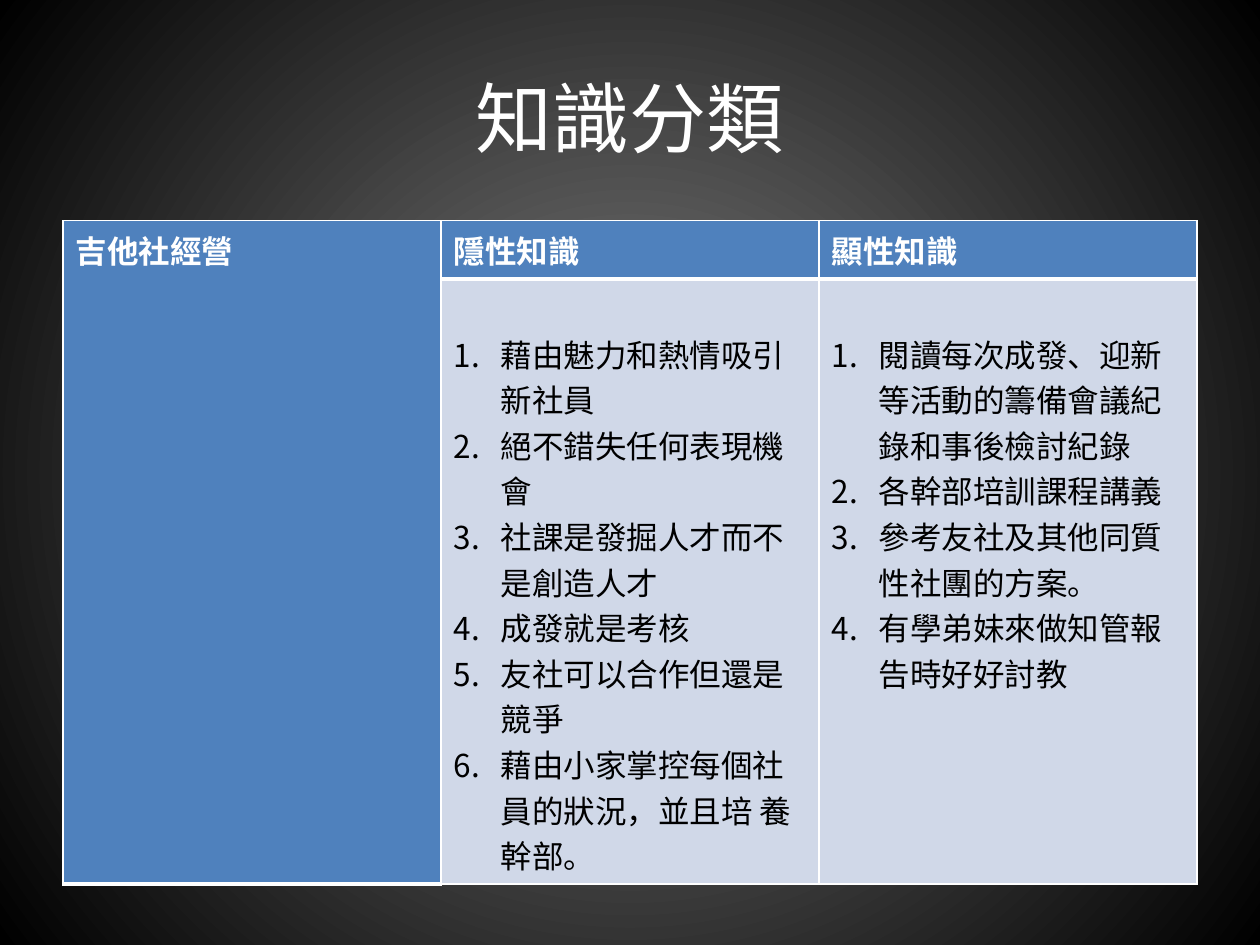
from dataclasses import dataclass

from lxml import etree
from pptx import Presentation
from pptx.dml.color import RGBColor
from pptx.enum import text
from pptx.oxml import ns
from pptx.util import Cm, Pt


@dataclass
class Theme:
    font: str = "Calibri"
    title_size: int = 44
    body_size: int = 18
    light: str = "FFFFFF"
    dark: str = "000000"
    glow: str = "7F7F7F"
    heading_fill: str = "4F81BD"
    body_fill: str = "D0D8E8"


theme = Theme()


def write(paragraph, content, size=theme.body_size, color=theme.dark, bold=False, numbered=False):
    run = paragraph.add_run()
    run.text = content
    run.font.name = theme.font
    run.font.size = Pt(size)
    run.font.bold = bold
    run.font.color.rgb = RGBColor.from_string(color)
    if numbered:
        properties = paragraph._p.get_or_add_pPr()
        properties.set("marL", str(Cm(0.95)))
        properties.set("indent", str(-Cm(0.95)))
        bullet_font = etree.SubElement(properties, ns.qn("a:buFont"))
        bullet_font.set("typeface", "+mj-lt")
        bullet = etree.SubElement(properties, ns.qn("a:buAutoNum"))
        bullet.set("type", "arabicPeriod")


def add_borders(cell, color, widths):
    properties = cell._tc.get_or_add_tcPr()
    for index, (side, width) in enumerate(widths.items()):
        line = etree.Element(ns.qn(f"a:ln{side}"), w=str(Pt(width)))
        fill = etree.SubElement(line, ns.qn("a:solidFill"))
        etree.SubElement(fill, ns.qn("a:srgbClr"), val=color)
        properties.insert(index, line)


presentation = Presentation()
presentation.slide_width = Cm(25.4)
presentation.slide_height = Cm(19.05)
slide = presentation.slides.add_slide(presentation.slide_layouts[5])

background = slide.background.fill
background.gradient()
for stop, color, position in zip(background.gradient_stops, (theme.glow, theme.dark), (0, 1)):
    stop.color.rgb = RGBColor.from_string(color)
    stop.position = position
gradient = next(slide._element.iter(ns.qn("a:gradFill")))
gradient.remove(gradient.find(ns.qn("a:lin")))
circle = etree.SubElement(gradient, ns.qn("a:path"))
circle.set("path", "circle")
etree.SubElement(circle, ns.qn("a:fillToRect"), l="50000", t="50000", r="50000", b="50000")

title = slide.shapes.title
title.left, title.top, title.width, title.height = Cm(1.27), Cm(0.76), Cm(22.86), Cm(3.18)
title.text_frame.vertical_anchor = text.MSO_ANCHOR.MIDDLE
title_paragraph = title.text_frame.paragraphs[0]
title_paragraph.alignment = text.PP_ALIGN.CENTER
write(title_paragraph, "知識分類", size=theme.title_size, color=theme.light)

headings = ["吉他社經營", "隱性知識", "顯性知識"]
knowledge = [
    [
        "藉由魅力和熱情吸引新社員",
        "絕不錯失任何表現機會",
        "社課是發掘人才而不是創造人才",
        "成發就是考核",
        "友社可以合作但還是競爭",
        "藉由小家掌控每個社員的狀況，並且培 養幹部。",
    ],
    [
        "閱讀每次成發、迎新等活動的籌備會議紀錄和事後檢討紀錄",
        "各幹部培訓課程講義",
        "參考友社及其他同質性社團的方案。",
        "有學弟妹來做知管報告時好好討教",
    ],
]

table = slide.shapes.add_table(2, 3, Cm(1.27), Cm(4.45), Cm(22.86), Cm(11.2)).table
table.horz_banding = False
table.rows[0].height = Cm(1.04)
table.rows[1].height = Cm(10.16)
table.cell(0, 0).merge(table.cell(1, 0))

for row in range(2):
    for column in range(3):
        cell = table.cell(row, column)
        is_heading = row == 0 or column == 0
        cell.fill.solid()
        cell.fill.fore_color.rgb = RGBColor.from_string(
            theme.heading_fill if is_heading else theme.body_fill
        )
        top = 3 if row == 1 and column > 0 else 1
        bottom = 3 if is_heading else 1
        add_borders(cell, theme.light, {"L": 1, "R": 1, "T": top, "B": bottom})

for column, heading in enumerate(headings):
    write(table.cell(0, column).text_frame.paragraphs[0], heading, color=theme.light, bold=True)

for column, items in enumerate(knowledge, start=1):
    cell = table.cell(1, column)
    cell.margin_top = Cm(1.04)
    frame = cell.text_frame
    for index, item in enumerate(items):
        paragraph = frame.add_paragraph() if index else frame.paragraphs[0]
        write(paragraph, item, numbered=True)

presentation.save("out.pptx")
